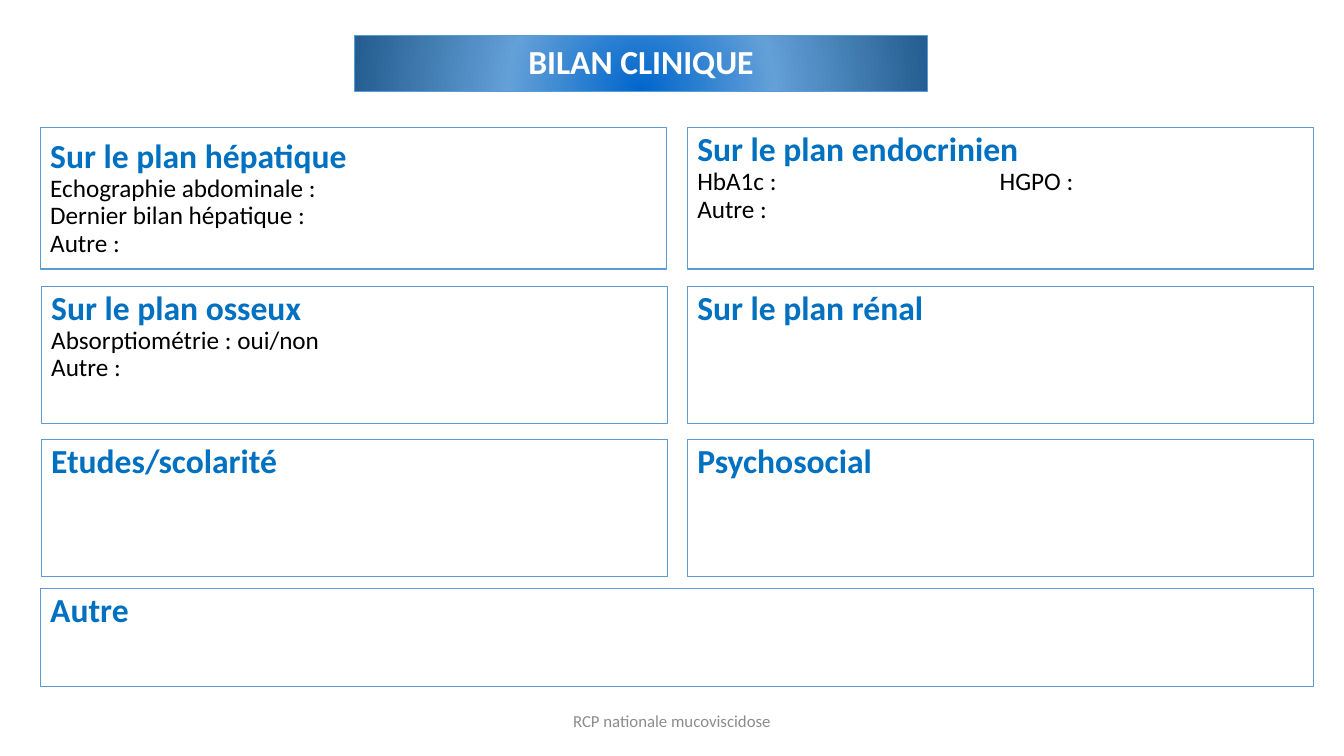
from lxml import etree
from pptx import Presentation
from pptx.dml.color import RGBColor
from pptx.enum import shapes, text
from pptx.oxml import ns, parse_xml
from pptx.util import Pt

BLUE = RGBColor(0x00, 0x70, 0xC0)
EDGE = RGBColor(0x5B, 0x9B, 0xD5)
BLACK = RGBColor(0, 0, 0)
WHITE = RGBColor(0xFF, 0xFF, 0xFF)
GREY = RGBColor(0x8C, 0x8C, 0x8C)
STOPS = [(0, "0066CC"), (46, "63A0D7"), (100, "255E91")]

TITLE = "BILAN CLINIQUE"
FOOTER = "RCP nationale mucoviscidose"
ROWS = [
    (91.4, 100.8, 28.8, [
        ("Sur le plan hépatique",
         ["Echographie abdominale :", "Dernier bilan hépatique :", "Autre :"]),
        ("Sur le plan endocrinien", ["HbA1c :\tHGPO :", "Autre :"])]),
    (204.5, 97.9, 29.5, [
        ("Sur le plan osseux", ["Absorptiométrie : oui/non", "Autre :"]),
        ("Sur le plan rénal", [])]),
    (313.9, 97.9, 29.5, [("Etudes/scolarité", []), ("Psychosocial", [])]),
    (420.5, 69.8, 28.8, [("Autre", [])]),
]
RIGHT, COL, WIDE = 491, 447.3, 909.5
TAB = 216


def write(par, words, size, color, bold=False, align=text.PP_ALIGN.LEFT, gap=0.9):
    par.alignment = align
    par.line_spacing = gap
    run = par.add_run()
    run.text = words
    font = run.font
    font.name, font.size, font.bold = "Calibri", Pt(size), bold
    font.color.rgb = color
    if "\t" in words:
        props = par._p.get_or_add_pPr()
        tabs = etree.SubElement(props, ns.qn("a:tabLst"))
        etree.SubElement(tabs, ns.qn("a:tab"), pos=str(Pt(TAB)), algn="l")


def edge(shape):
    shape.line.color.rgb = EDGE
    shape.line.width = Pt(0.75)


def shade(shape):
    stops = "".join(f'<a:gs pos="{pos * 1000}"><a:srgbClr val="{hue}"/></a:gs>'
                    for pos, hue in STOPS)
    grad = parse_xml(
        f'<a:gradFill {ns.nsdecls("a")} rotWithShape="1"><a:gsLst>{stops}</a:gsLst>'
        '<a:path path="circle"><a:fillToRect l="50000" t="130000" r="50000" b="-30000"/>'
        '</a:path></a:gradFill>')
    shape.fill.background()
    props = shape._element.spPr
    props.replace(props.find(ns.qn("a:noFill")), grad)


def panel(slide, left, top, width, height, head, lines):
    box = slide.shapes.add_shape(shapes.MSO_SHAPE.RECTANGLE,
                                 Pt(left), Pt(top), Pt(width), Pt(height))
    box.shadow.inherit = False
    box.fill.background()
    edge(box)
    frame = box.text_frame
    frame.word_wrap = True
    full = len(lines) > 2
    frame.vertical_anchor = text.MSO_ANCHOR.MIDDLE if full else text.MSO_ANCHOR.TOP
    write(frame.paragraphs[0], head, 24, BLUE, True)
    for line in lines:
        write(frame.add_paragraph(), line, 18, BLACK)


def main():
    deck = Presentation()
    deck.slide_width, deck.slide_height = Pt(960), Pt(540)
    slide = deck.slides.add_slide(deck.slide_layouts[5])

    title = slide.shapes.title
    title.left, title.top, title.width, title.height = Pt(253.4), Pt(25.4), Pt(409), Pt(39.8)
    shade(title)
    edge(title)
    frame = title.text_frame
    frame.auto_size = text.MSO_AUTO_SIZE.NONE
    frame.vertical_anchor = text.MSO_ANCHOR.MIDDLE
    write(frame.paragraphs[0], TITLE, 24, WHITE, True, text.PP_ALIGN.CENTER)

    for top, height, left, cells in ROWS:
        width = COL if len(cells) > 1 else WIDE
        for spot, (head, lines) in zip((left, RIGHT), cells):
            panel(slide, spot, top, width, height, head, lines)

    foot = slide.shapes.add_textbox(Pt(318), Pt(500.5), Pt(324), Pt(28.8)).text_frame
    foot.word_wrap = True
    foot.vertical_anchor = text.MSO_ANCHOR.MIDDLE
    write(foot.paragraphs[0], FOOTER, 12, GREY, align=text.PP_ALIGN.CENTER, gap=1.0)
    deck.save("out.pptx")


if __name__ == "__main__":
    main()
